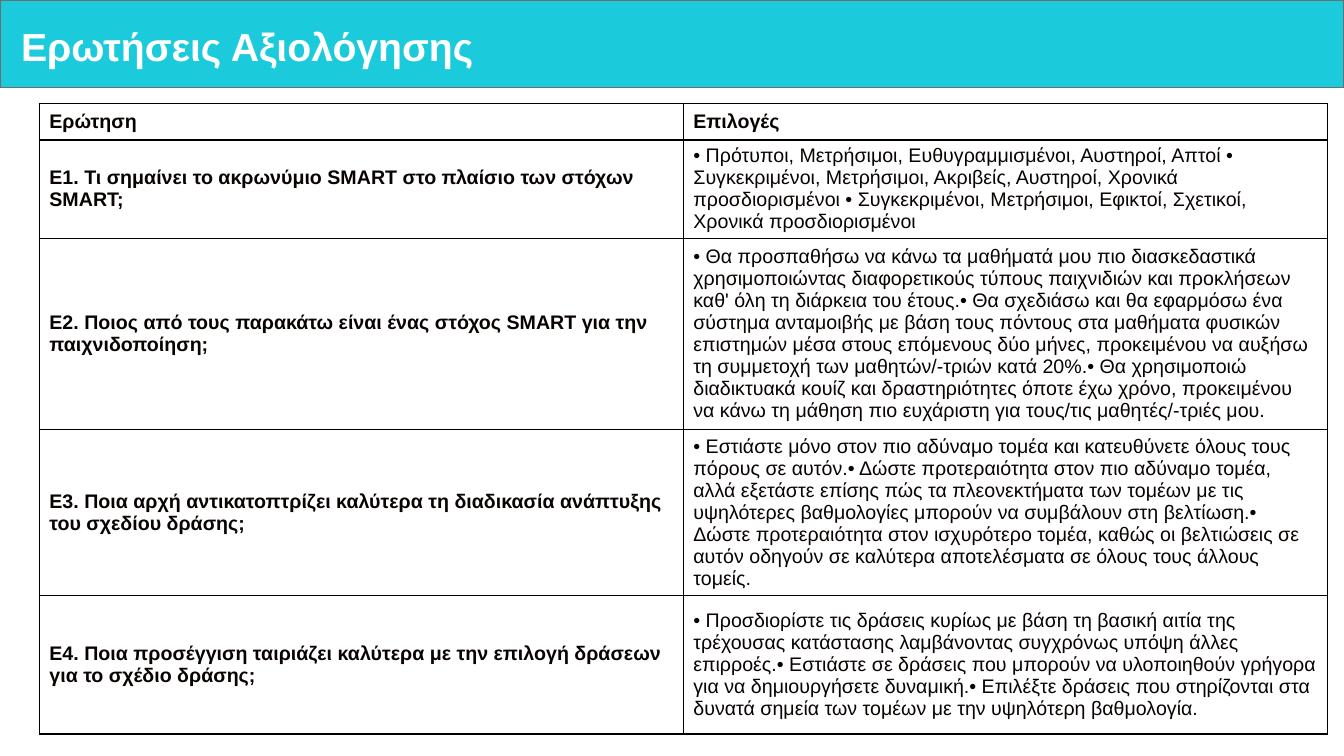
from lxml import etree
from pptx import Presentation
from pptx.dml.color import RGBColor
from pptx.enum.shapes import MSO_SHAPE
from pptx.enum.text import MSO_ANCHOR, PP_ALIGN
from pptx.oxml.ns import qn
from pptx.util import Pt

RECT = MSO_SHAPE.RECTANGLE
MIDDLE = MSO_ANCHOR.MIDDLE
LEFT = PP_ALIGN.LEFT

# Content
TITLE = "Ερωτήσεις Αξιολόγησης"
HEADER = ("Ερώτηση", "Επιλογές")
QUESTIONS = [
    ("Ε1. Τι σημαίνει το ακρωνύμιο SMART στο πλαίσιο των στόχων SMART;",
     "• Πρότυποι, Μετρήσιμοι, Ευθυγραμμισμένοι, Αυστηροί, Απτοί "
     "• Συγκεκριμένοι, Μετρήσιμοι, Ακριβείς, Αυστηροί, Χρονικά προσδιορισμένοι "
     "• Συγκεκριμένοι, Μετρήσιμοι, Εφικτοί, Σχετικοί, Χρονικά προσδιορισμένοι"),
    ("Ε2. Ποιος από τους παρακάτω είναι ένας στόχος SMART για την παιχνιδοποίηση;",
     "• Θα προσπαθήσω να κάνω τα μαθήματά μου πιο διασκεδαστικά χρησιμοποιώντας "
     "διαφορετικούς τύπους παιχνιδιών και προκλήσεων καθ' όλη τη διάρκεια του έτους."
     "• Θα σχεδιάσω και θα εφαρμόσω ένα σύστημα ανταμοιβής με βάση τους πόντους στα "
     "μαθήματα φυσικών επιστημών μέσα στους επόμενους δύο μήνες, προκειμένου να "
     "αυξήσω τη συμμετοχή των μαθητών/-τριών κατά 20%."
     "• Θα χρησιμοποιώ διαδικτυακά κουίζ και δραστηριότητες όποτε έχω χρόνο, "
     "προκειμένου να κάνω τη μάθηση πιο ευχάριστη για τους/τις μαθητές/-τριές μου."),
    ("Ε3. Ποια αρχή αντικατοπτρίζει καλύτερα τη διαδικασία ανάπτυξης του σχεδίου δράσης;",
     "• Εστιάστε μόνο στον πιο αδύναμο τομέα και κατευθύνετε όλους τους πόρους σε αυτόν."
     "• Δώστε προτεραιότητα στον πιο αδύναμο τομέα, αλλά εξετάστε επίσης πώς τα "
     "πλεονεκτήματα των τομέων με τις υψηλότερες βαθμολογίες μπορούν να συμβάλουν "
     "στη βελτίωση."
     "• Δώστε προτεραιότητα στον ισχυρότερο τομέα, καθώς οι βελτιώσεις σε αυτόν "
     "οδηγούν σε καλύτερα αποτελέσματα σε όλους τους άλλους τομείς."),
    ("Ε4. Ποια προσέγγιση ταιριάζει καλύτερα με την επιλογή δράσεων για το σχέδιο δράσης;",
     "• Προσδιορίστε τις δράσεις κυρίως με βάση τη βασική αιτία της τρέχουσας "
     "κατάστασης λαμβάνοντας συγχρόνως υπόψη άλλες επιρροές."
     "• Εστιάστε σε δράσεις που μπορούν να υλοποιηθούν γρήγορα για να δημιουργήσετε "
     "δυναμική."
     "• Επιλέξτε δράσεις που στηρίζονται στα δυνατά σημεία των τομέων με την "
     "υψηλότερη βαθμολογία."),
]

# Look and layout, in points
FONT = "Arial"
COLORS = {"bar": "1BCBDC", "bar_line": "6C6E70", "title": "FFFFFF",
          "text": "080301", "border": "000000"}
SLIDE_W, SLIDE_H = 960, 540
BAR_H = 62.6
TABLE_X, TABLE_Y, COL_W = 28.1, 74, 460
ROW_HEIGHTS = [26, 62.6, 136.8, 118.2, 99.2]


def rgb(name):
    return RGBColor.from_string(COLORS[name])


def format_text(p, size, color, bold):
    p.alignment = LEFT
    for r in p.runs:
        r.font.name = FONT
        r.font.size = Pt(size)
        r.font.bold = bold
        r.font.color.rgb = rgb(color)


def add_borders(cell):
    tc_pr = cell._tc.get_or_add_tcPr()
    for side in ("lnL", "lnR", "lnT", "lnB"):
        ln = etree.SubElement(tc_pr, qn(f"a:{side}"), w=str(Pt(1)))
        fill = etree.SubElement(ln, qn("a:solidFill"))
        etree.SubElement(fill, qn("a:srgbClr"), val=COLORS["border"])


def add_title(s):
    # Bar behind the title
    bar = s.shapes.add_shape(RECT, 0, 0, Pt(SLIDE_W), Pt(BAR_H))
    bar.shadow.inherit = False
    bar.fill.solid()
    bar.fill.fore_color.rgb = rgb("bar")
    bar.line.color.rgb = rgb("bar_line")
    bar.line.width = Pt(1)
    title = s.shapes.title
    title.element.addprevious(bar.element)

    # Title text
    title.left, title.top = Pt(7.9), Pt(6.5)
    title.width, title.height = Pt(940.3), Pt(56.1)
    tf = title.text_frame
    tf.text = TITLE
    tf.vertical_anchor = MIDDLE
    tf.margin_left = Pt(7.2)
    tf.margin_top = tf.margin_right = tf.margin_bottom = Pt(4.3)
    p = tf.paragraphs[0]
    p.line_spacing = 0.9
    format_text(p, 28, "title", True)


def add_question_table(s):
    rows = [HEADER] + QUESTIONS
    table = s.shapes.add_table(
        len(rows), len(HEADER), Pt(TABLE_X), Pt(TABLE_Y),
        Pt(COL_W * len(HEADER)), Pt(sum(ROW_HEIGHTS))).table
    table.first_row = table.horz_banding = False
    for i, (texts, height) in enumerate(zip(rows, ROW_HEIGHTS)):
        table.rows[i].height = Pt(height)
        for j, text in enumerate(texts):
            cell = table.cell(i, j)
            cell.text = text
            cell.vertical_anchor = MIDDLE
            add_borders(cell)
            cell.fill.background()
            format_text(cell.text_frame.paragraphs[0], 14, "text", i == 0 or j == 0)


def main():
    prs = Presentation()
    prs.slide_width, prs.slide_height = Pt(SLIDE_W), Pt(SLIDE_H)
    s = prs.slides.add_slide(prs.slide_layouts.get_by_name("Title Only"))
    add_title(s)
    add_question_table(s)
    prs.save("out.pptx")


if __name__ == "__main__":
    main()
